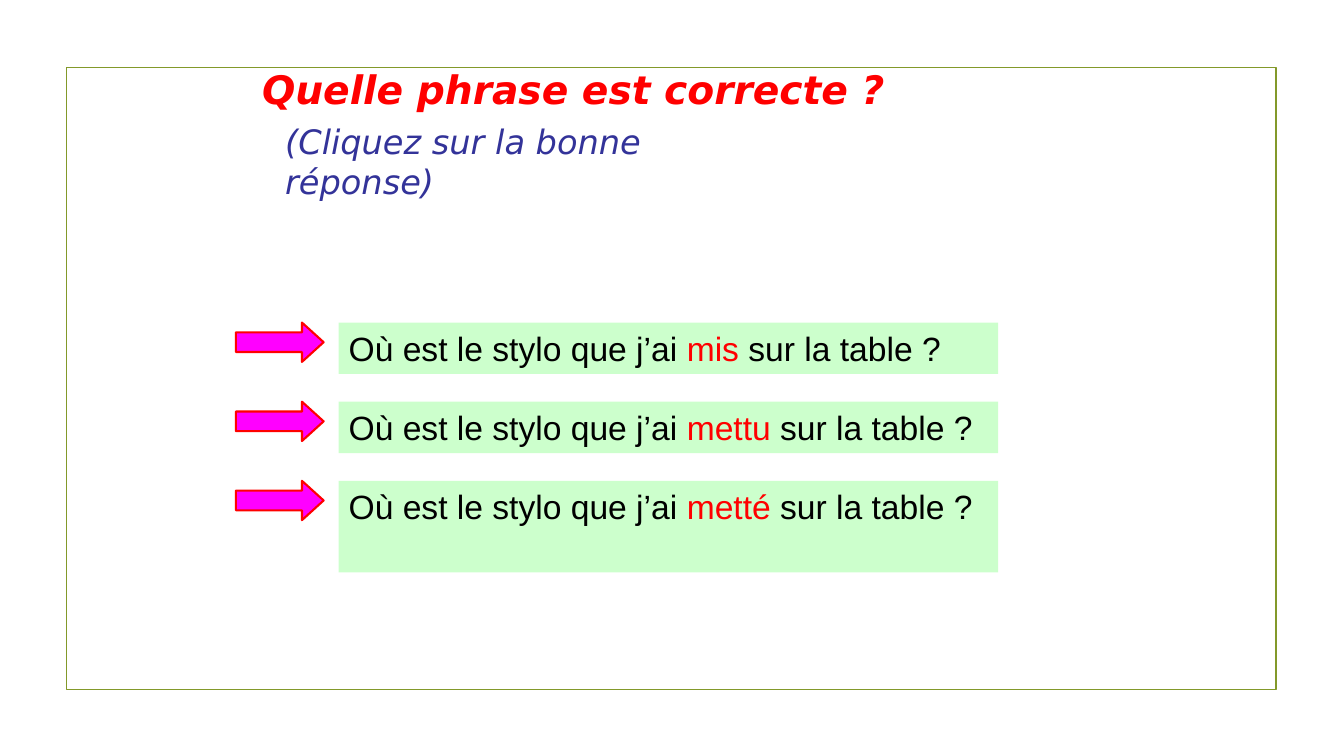
from dataclasses import dataclass

from pptx import Presentation
from pptx.dml.color import RGBColor
from pptx.enum.shapes import MSO_SHAPE
from pptx.enum.text import MSO_ANCHOR, PP_ALIGN
from pptx.shapes.autoshape import Shape
from pptx.slide import Slide
from pptx.util import Inches, Pt

RECT = MSO_SHAPE.RECTANGLE
ARROW = MSO_SHAPE.RIGHT_ARROW
TOP = MSO_ANCHOR.TOP
LEFT = PP_ALIGN.LEFT
CENTER = PP_ALIGN.CENTER

OLIVE = RGBColor(0x83, 0x99, 0x2A)
RED = RGBColor(0xFF, 0x00, 0x00)
NAVY = RGBColor(0x33, 0x33, 0x99)
BLACK = RGBColor(0x00, 0x00, 0x00)
MINT = RGBColor(0xCC, 0xFF, 0xCC)
PINK = RGBColor(0xFF, 0x00, 0xFF)

FIRST_TOP = 3.2
STEP = 0.785


@dataclass
class Box:
    left: float
    top: float
    width: float
    height: float

    def lengths(self) -> list[Inches]:
        return [Inches(v) for v in (self.left, self.top, self.width, self.height)]


@dataclass
class Heading:
    box: Box
    text: str
    size: float
    color: RGBColor
    bold: bool
    align: PP_ALIGN


@dataclass
class Answer:
    verb: str
    height: float


HEADINGS = [
    Heading(Box(2.18, 0.6, 7.01, 0.57), "Quelle phrase est correcte ?", 28, RED, True, CENTER),
    Heading(Box(2.73, 1.15, 4.88, 0.9), "(Cliquez sur la bonne réponse)", 24, NAVY, False, LEFT),
]
ANSWERS = [Answer("mis", 0.51), Answer("mettu", 0.51), Answer("metté", 0.91)]


def add_form(slide: Slide, kind: MSO_SHAPE, box: Box, fill: RGBColor | None = None,
             line: RGBColor | None = None, weight: float = 1) -> Shape:
    shape = slide.shapes.add_shape(kind, *box.lengths())
    shape.shadow.inherit = False
    if fill is None:
        shape.fill.background()
    else:
        shape.fill.solid()
        shape.fill.fore_color.rgb = fill
    if line is None:
        shape.line.fill.background()
    else:
        shape.line.color.rgb = line
        shape.line.width = Pt(weight)
    return shape


def add_heading(slide: Slide, head: Heading) -> None:
    frame = slide.shapes.add_textbox(*head.box.lengths()).text_frame
    frame.word_wrap = True
    para = frame.paragraphs[0]
    para.alignment = head.align
    run = para.add_run()
    run.text = head.text
    run.font.name = "DejaVu Sans"
    run.font.size = Pt(head.size)
    run.font.color.rgb = head.color
    run.font.bold = head.bold
    run.font.italic = True


def add_answer(slide: Slide, answer: Answer, top: float) -> None:
    shape = add_form(slide, RECT, Box(3.36, top, 6.54, answer.height), MINT)
    frame = shape.text_frame
    frame.word_wrap = True
    frame.vertical_anchor = TOP
    para = frame.paragraphs[0]
    para.alignment = LEFT
    parts = [
        ("Où est le stylo que j’ai ", BLACK),
        (answer.verb, RED),
        (" sur la table ?", BLACK),
    ]
    for text, color in parts:
        run = para.add_run()
        run.text = text
        run.font.name = "Arial"
        run.font.size = Pt(24)
        run.font.color.rgb = color


def add_arrow(slide: Slide, top: float) -> None:
    arrow = add_form(slide, ARROW, Box(2.34, top, 0.87, 0.39), PINK, RED, 1.5)
    arrow.adjustments[0] = 0.5
    arrow.adjustments[1] = 0.55


def main() -> None:
    deck = Presentation()
    deck.slide_width = Inches(13.33)
    deck.slide_height = Inches(7.5)
    slide = deck.slides.add_slide(deck.slide_layouts[6])
    add_form(slide, RECT, Box(0.66, 0.67, 12, 6.17), line=OLIVE, weight=1.25)
    for head in HEADINGS:
        add_heading(slide, head)
    for row, answer in enumerate(ANSWERS):
        top = FIRST_TOP + row * STEP
        add_answer(slide, answer, top)
        add_arrow(slide, top)
    deck.save("out.pptx")


if __name__ == "__main__":
    main()
